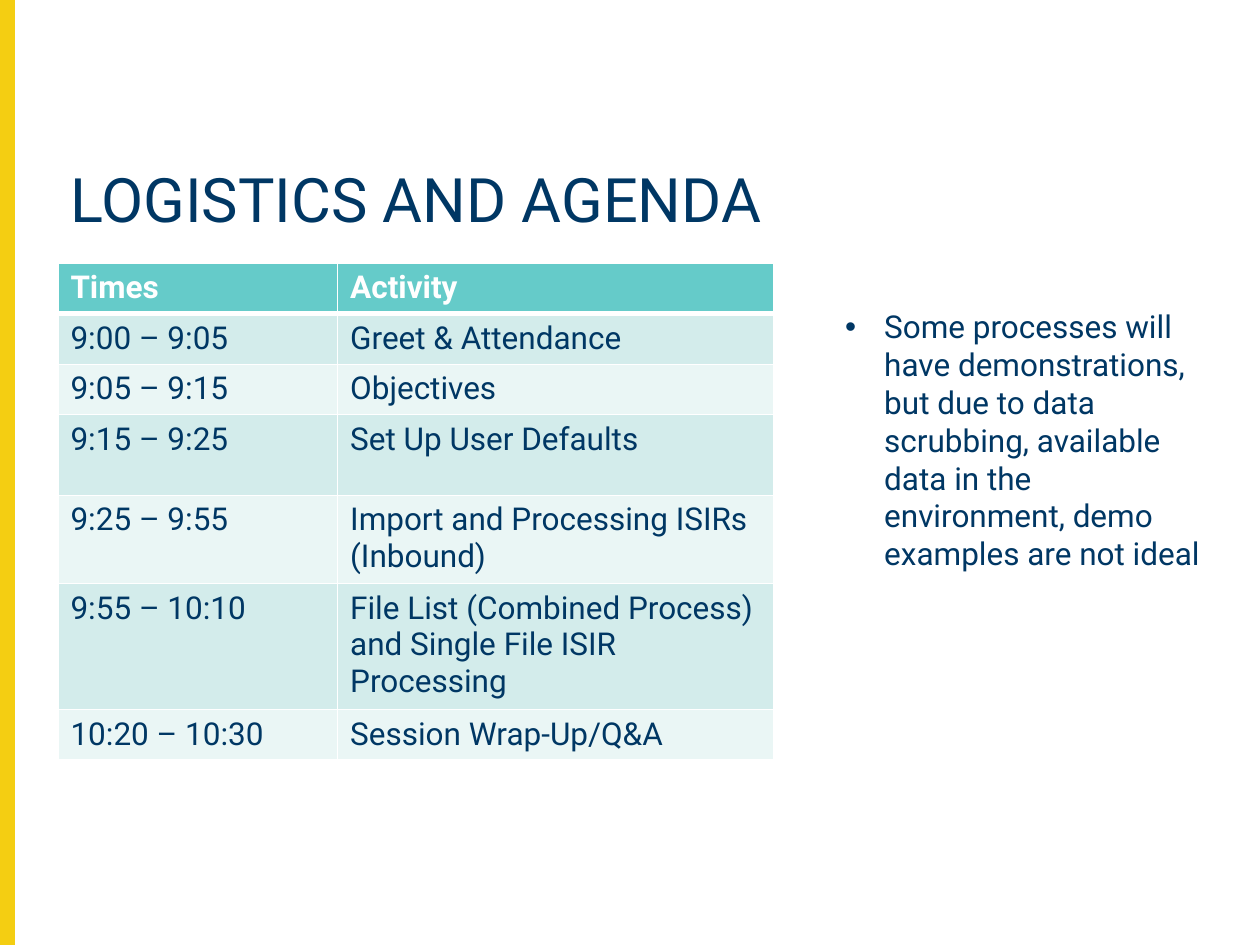
from lxml.etree import SubElement
from pptx import Presentation
from pptx.dml.color import RGBColor
from pptx.enum.shapes import MSO_SHAPE
from pptx.enum.text import MSO_ANCHOR
from pptx.oxml.ns import qn
from pptx.util import Inches, Pt

NAVY = RGBColor(0x00, 0x37, 0x64)
YELLOW = RGBColor(0xF4, 0xCE, 0x12)
TEAL = RGBColor(0x65, 0xCB, 0xC9)
BAND_DARK = RGBColor(0xD3, 0xEC, 0xEB)
BAND_LIGHT = RGBColor(0xEA, 0xF6, 0xF5)
WHITE = RGBColor(0xFF, 0xFF, 0xFF)

AGENDA = [
    ("Times", "Activity"),
    ("9:00 – 9:05", "Greet & Attendance"),
    ("9:05 – 9:15", "Objectives"),
    ("9:15 – 9:25", "Set Up User Defaults"),
    ("9:25 – 9:55", "Import and Processing ISIRs (Inbound)"),
    ("9:55 – 10:10", "File List (Combined Process) and Single File ISIR Processing"),
    ("10:20 – 10:30", "Session Wrap-Up/Q&A"),
]
ROW_HEIGHTS = [0.37, 0.37, 0.37, 0.64, 0.37, 0.37, 0.37]
COLUMN_WIDTHS = [2.22, 3.46]


def write(frame, text, size, color, bold=False):
    frame.text = text
    frame.word_wrap = True
    font = frame.paragraphs[0].runs[0].font
    font.name, font.size, font.bold = "Roboto", Pt(size), bold
    font.color.rgb = color
    return frame.paragraphs[0]


def add_border(properties, side, points):
    line = SubElement(properties, qn(f"a:{side}"), w=str(Pt(points)))
    fill = SubElement(line, qn("a:solidFill"))
    SubElement(fill, qn("a:srgbClr"), val=str(WHITE))


deck = Presentation()
deck.slide_width, deck.slide_height = Inches(10), Inches(7.5)
page = deck.slides.add_slide(deck.slide_layouts[6])

# Yellow bar along the left edge
bar = page.shapes.add_shape(MSO_SHAPE.RECTANGLE, 0, 0, Inches(0.11), Inches(7.5))
bar.shadow.inherit = False
bar.fill.solid()
bar.fill.fore_color.rgb = YELLOW
bar.line.color.rgb = YELLOW
bar.line.width = Pt(1)

# Title
title = page.shapes.add_textbox(Inches(0.46), Inches(1.3), Inches(9.33), Inches(0.79))
title.text_frame.vertical_anchor = MSO_ANCHOR.TOP
para = write(title.text_frame, "LOGISTICS AND AGENDA", 35, NAVY)
para.line_spacing = 0.9

# Agenda table
table = page.shapes.add_table(
    len(AGENDA), 2, Inches(0.46), Inches(2.09), Inches(5.68), Inches(sum(ROW_HEIGHTS))
).table
for column, width in zip(table.columns, COLUMN_WIDTHS):
    column.width = Inches(width)
for row, height in zip(table.rows, ROW_HEIGHTS):
    row.height = Inches(height)

for row_index, entries in enumerate(AGENDA):
    header = row_index == 0
    band = BAND_DARK if row_index % 2 else BAND_LIGHT
    for column_index, text in enumerate(entries):
        cell = table.cell(row_index, column_index)
        write(cell.text_frame, text, 18, WHITE if header else NAVY, header)
        properties = cell._tc.get_or_add_tcPr()
        for side in ("lnL", "lnR", "lnT", "lnB"):
            thick = (header and side == "lnB") or (row_index == 1 and side == "lnT")
            add_border(properties, side, 3 if thick else 1)
        cell.fill.solid()
        cell.fill.fore_color.rgb = TEAL if header else band

# Bulleted remark
remark = page.shapes.add_textbox(Inches(6.61), Inches(2.39), Inches(3.04), Inches(2.22))
para = write(
    remark.text_frame,
    "Some processes will have demonstrations, but due to data scrubbing, "
    "available data in the environment, demo examples are not ideal",
    18,
    NAVY,
)
properties = para._p.get_or_add_pPr()
properties.set("marL", str(Inches(0.31)))
properties.set("indent", str(-Inches(0.31)))
SubElement(properties, qn("a:buFont"), typeface="Arial")
SubElement(properties, qn("a:buChar"), char="•")

deck.save("out.pptx")
